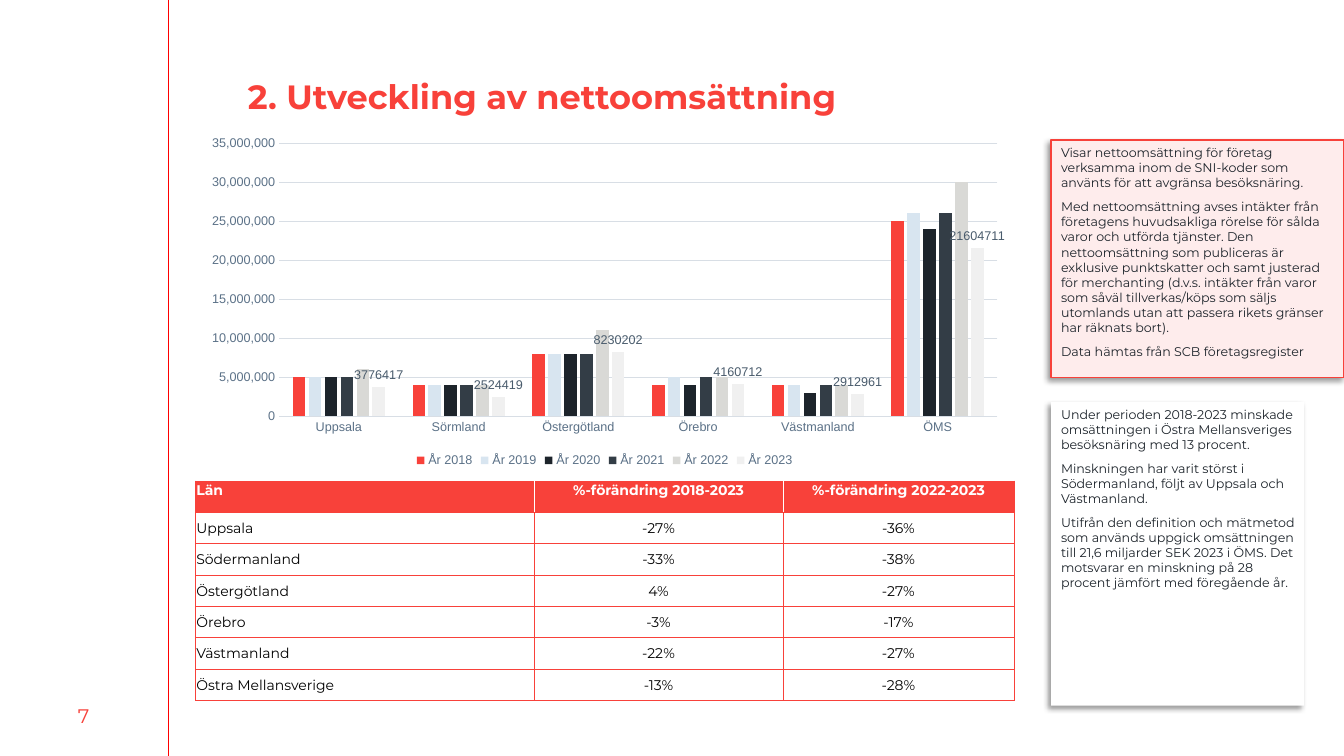
from lxml.etree import SubElement
from pptx import Presentation
from pptx.chart.data import CategoryChartData
from pptx.dml.color import RGBColor
from pptx.enum.chart import XL_CHART_TYPE, XL_LABEL_POSITION, XL_LEGEND_POSITION, XL_TICK_MARK
from pptx.enum.shapes import MSO_CONNECTOR, MSO_SHAPE
from pptx.enum.text import MSO_ANCHOR, PP_ALIGN
from pptx.oxml import parse_xml
from pptx.oxml.ns import nsdecls, qn
from pptx.util import Cm, Pt

RED = RGBColor(0xF8, 0x41, 0x3A)
BORDER_RED = RGBColor(0xF7, 0x41, 0x3A)
LINE_RED = RGBColor(0xFF, 0x00, 0x00)
PINK = RGBColor(0xFE, 0xEC, 0xEC)
WHITE = RGBColor(0xFF, 0xFF, 0xFF)
BLACK = RGBColor(0x00, 0x00, 0x00)
INK = RGBColor(0x1D, 0x24, 0x2B)
SLATE = RGBColor(0x33, 0x3D, 0x46)
LABEL = RGBColor(0x49, 0x5B, 0x6C)
AXIS = RGBColor(0x5B, 0x71, 0x87)
GRID = RGBColor(0xD8, 0xDE, 0xE5)
ICE = RGBColor(0xD8, 0xE5, 0xF0)
STONE = RGBColor(0xD9, 0xD9, 0xD6)
MIST = RGBColor(0xF0, 0xF0, 0xF0)

COUNTIES = ["Uppsala", "Sörmland", "Östergötland", "Örebro", "Västmanland", "ÖMS"]
MILLION = 1_000_000
TURNOVER = [
    ("År 2018", RED, [n * MILLION for n in (5, 4, 8, 4, 4, 25)]),
    ("År 2019", ICE, [n * MILLION for n in (5, 4, 8, 5, 4, 26)]),
    ("År 2020", INK, [n * MILLION for n in (5, 4, 8, 4, 3, 24)]),
    ("År 2021", SLATE, [n * MILLION for n in (5, 4, 8, 5, 4, 26)]),
    ("År 2022", STONE, [n * MILLION for n in (6, 4, 11, 5, 4, 30)]),
    ("År 2023", MIST, [3776417, 2524419, 8230202, 4160712, 2912961, 21604711]),
]
CHANGES = [
    ["Län", "%-förändring 2018-2023", "%-förändring 2022-2023"],
    ["Uppsala", "-27%", "-36%"],
    ["Södermanland", "-33%", "-38%"],
    ["Östergötland", "4%", "-27%"],
    ["Örebro", "-3%", "-17%"],
    ["Västmanland", "-22%", "-27%"],
    ["Östra Mellansverige", "-13%", "-28%"],
]
DEFINITIONS = [
    "Visar nettoomsättning för företag verksamma inom de SNI-koder som använts för att avgränsa besöksnäring.",
    "Med nettoomsättning avses intäkter från företagens huvudsakliga rörelse för sålda varor och utförda "
    "tjänster. Den nettoomsättning som publiceras är exklusive punktskatter och samt justerad för merchanting "
    "(d.v.s. intäkter från varor som såväl tillverkas/köps som säljs utomlands utan att passera rikets gränser "
    "har räknats bort).",
    "Data hämtas från SCB företagsregister",
]
FINDINGS = [
    "Under perioden 2018-2023 minskade omsättningen i Östra Mellansveriges besöksnäring med 13 procent.",
    "Minskningen har varit störst i Södermanland, följt av Uppsala och Västmanland.",
    "Utifrån den definition och mätmetod som används uppgick omsättningen till 21,6 miljarder SEK 2023 i ÖMS. "
    "Det motsvarar en minskning på 28 procent jämfört med föregående år.",
]


def set_font(font, size, color, name, bold=False):
    font.size, font.name, font.bold = Pt(size), name, bold
    font.color.rgb = color


def write(tf, paragraphs, size=10, color=BLACK, name="Montserrat", bold=False,
          align=PP_ALIGN.LEFT, anchor=MSO_ANCHOR.TOP, spacing=0, inset=None):
    tf.word_wrap = True
    tf.vertical_anchor = anchor
    if inset is not None:
        tf.margin_left = tf.margin_top = tf.margin_right = tf.margin_bottom = Cm(inset)
    for i, text in enumerate(paragraphs):
        p = tf.paragraphs[0] if i == 0 else tf.add_paragraph()
        p.alignment = align
        p.space_before = Pt(spacing if i else 0)
        p.space_after = Pt(spacing)
        r = p.add_run()
        r.text = text
        set_font(r.font, size, color, name, bold)


def set_border(cell, side, color):
    ln = SubElement(cell._tc.get_or_add_tcPr(), qn(f"a:ln{side}"), w=str(Pt(0.5)))
    SubElement(SubElement(ln, qn("a:solidFill")), qn("a:srgbClr"), val=str(color))


class SlideBuilder:
    text_font = "Montserrat"
    chart_font = "Arial"

    def __init__(self, slide):
        self.slide = slide
        self.shapes = slide.shapes

    def text(self, text, x, y, w, h, **fmt):
        tb = self.shapes.add_textbox(Cm(x), Cm(y), Cm(w), Cm(h))
        write(tb.text_frame, [text], name=self.text_font, **fmt)

    def line(self, x1, y1, x2, y2, color):
        cxn = self.shapes.add_connector(MSO_CONNECTOR.STRAIGHT, Cm(x1), Cm(y1), Cm(x2), Cm(y2))
        cxn.line.color.rgb = color
        cxn.line.width = Pt(0.75)
        SubElement(cxn._element.spPr, qn("a:effectLst"))

    def note(self, paragraphs, x, y, w, h, fill, border=None):
        sp = self.shapes.add_shape(MSO_SHAPE.RECTANGLE, Cm(x), Cm(y), Cm(w), Cm(h))
        sp.fill.solid()
        sp.fill.fore_color.rgb = fill
        if border is None:
            sp.line.fill.background()
        else:
            sp.line.color.rgb = border
            sp.line.width = Pt(1)
        sp.shadow.inherit = False
        sp._element.spPr.find(qn("a:effectLst")).append(parse_xml(
            f'<a:outerShdw {nsdecls("a")} blurRad="{Pt(4)}" dist="{Pt(3)}" dir="8100000" algn="tr" '
            'rotWithShape="0"><a:srgbClr val="000000"><a:alpha val="40000"/></a:srgbClr></a:outerShdw>'))
        write(sp.text_frame, paragraphs, size=9, color=INK, name=self.text_font, spacing=3)

    def table(self, rows, x, y, widths, row_height):
        tbl = self.shapes.add_table(len(rows), len(widths), Cm(x), Cm(y),
                                    Cm(sum(widths)), Cm(row_height * len(rows))).table
        tbl.horz_banding = False
        for col, width in zip(tbl.columns, widths):
            col.width = Cm(width)
        for i, row in enumerate(rows):
            tbl.rows[i].height = Cm(row_height)
            for j, text in enumerate(row):
                self.cell(tbl.cell(i, j), text, i == 0, j == 0, j == len(row) - 1)

    def cell(self, cell, text, header, first, last):
        cell.margin_left = cell.margin_right = cell.margin_top = Cm(0.02)
        cell.margin_bottom = 0
        write(cell.text_frame, [text], color=WHITE if header else BLACK, name=self.text_font,
              bold=header, align=PP_ALIGN.LEFT if first else PP_ALIGN.CENTER)
        cell.vertical_anchor = MSO_ANCHOR.TOP if header else MSO_ANCHOR.MIDDLE
        set_border(cell, "L", WHITE if header and not first else RED)
        set_border(cell, "R", WHITE if header and not last else RED)
        set_border(cell, "T", RED)
        set_border(cell, "B", RED)
        if header:
            cell.fill.solid()
            cell.fill.fore_color.rgb = RED
        else:
            cell.fill.background()

    def chart(self, categories, series, x, y, w, h):
        data = CategoryChartData(number_format="0")
        data.categories = categories
        for name, _, values in series:
            data.add_series(name, values)
        chart = self.shapes.add_chart(XL_CHART_TYPE.COLUMN_CLUSTERED,
                                      Cm(x), Cm(y), Cm(w), Cm(h), data).chart
        set_font(chart.font, 10, INK, self.chart_font)
        chart.has_title = False
        chart.has_legend = True
        chart.legend.position = XL_LEGEND_POSITION.BOTTOM
        chart.legend.include_in_layout = False
        set_font(chart.legend.font, 9, AXIS, self.chart_font)
        for axis in (chart.category_axis, chart.value_axis):
            axis.major_tick_mark = axis.minor_tick_mark = XL_TICK_MARK.NONE
            set_font(axis.tick_labels.font, 9, AXIS, self.chart_font)
        chart.category_axis.format.line.color.rgb = GRID
        chart.category_axis.format.line.width = Pt(0.75)
        values_axis = chart.value_axis
        values_axis.minimum_scale, values_axis.maximum_scale = 0, 35 * MILLION
        values_axis.major_unit = 5 * MILLION
        values_axis.format.line.fill.background()
        values_axis.major_gridlines.format.line.color.rgb = GRID
        values_axis.major_gridlines.format.line.width = Pt(0.75)
        values_axis.tick_labels.number_format = "#,##0"
        values_axis.tick_labels.number_format_is_linked = False
        plot = chart.plots[0]
        plot.gap_width, plot.overlap = 219, -27
        plot.vary_by_categories = False
        for bars, (_, color, _) in zip(plot.series, series):
            bars.format.fill.solid()
            bars.format.fill.fore_color.rgb = color
        labels = plot.series[-1].data_labels
        labels.show_value = True
        labels.position = XL_LABEL_POSITION.OUTSIDE_END
        labels.number_format, labels.number_format_is_linked = "0", False
        set_font(labels.font, 9, LABEL, self.chart_font)


def main():
    prs = Presentation()
    prs.slide_width, prs.slide_height = Cm(33.87), Cm(19.05)
    s = SlideBuilder(prs.slides.add_slide(prs.slide_layouts[6]))
    s.text("7", 0, 17.53, 4.22, 1.02, size=14, color=BORDER_RED,
           align=PP_ALIGN.CENTER, anchor=MSO_ANCHOR.MIDDLE)
    s.line(4.24, 0, 4.24, 19.05, LINE_RED)
    s.text("2. Utveckling av nettoomsättning", 6.12, 1.78, 26.09, 2.26,
           size=24, color=RED, bold=True, inset=0.13)
    s.note(DEFINITIONS, 26.49, 3.53, 7.38, 5.99, PINK, BORDER_RED)
    s.note(FINDINGS, 26.49, 10.13, 6.38, 7.65, WHITE)
    s.table(CHANGES, 4.93, 12.12, [8.53, 6.27, 5.82], 0.79)
    s.chart(COUNTIES, TURNOVER, 4.93, 3.25, 20.62, 8.64)
    prs.save("out.pptx")


if __name__ == "__main__":
    main()
